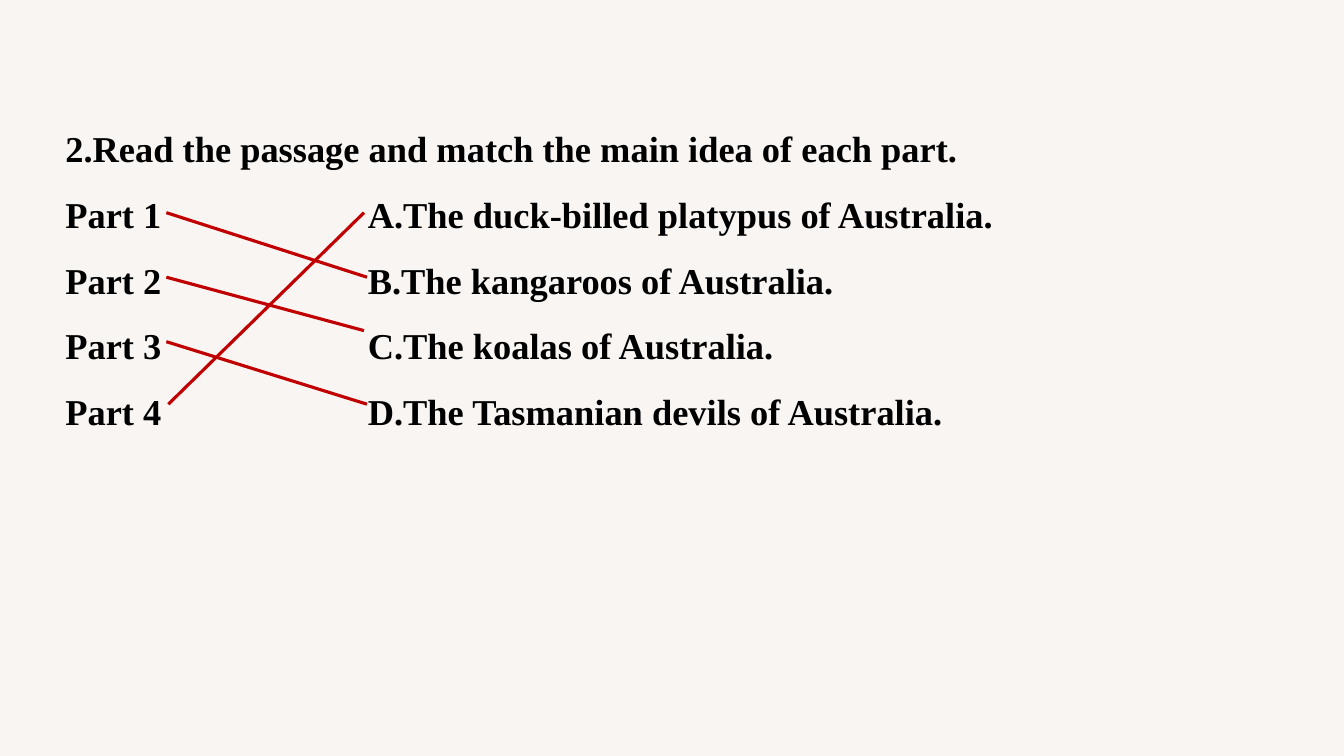
from dataclasses import dataclass

from lxml.etree import SubElement
from pptx import Presentation
from pptx.dml.color import RGBColor
from pptx.enum.shapes import MSO_CONNECTOR as Connector
from pptx.enum.text import MSO_AUTO_SIZE as AutoSize, PP_ALIGN as Align
from pptx.oxml.ns import qn
from pptx.util import Inches, Pt


@dataclass(frozen=True)
class Theme:
    background: RGBColor = RGBColor(0xF8, 0xF5, 0xF3)
    ink: RGBColor = RGBColor(0x00, 0x00, 0x00)
    answer: RGBColor = RGBColor(0xC0, 0x00, 0x00)
    font: str = "Times New Roman"
    size: float = 26
    leading: float = 46.8
    answer_width: float = 2.25


THEME = Theme()
QUESTION = "2.Read the passage and match the main idea of each part."
IDEAS = [
    "A.The duck-billed platypus of Australia.",
    "B.The kangaroos of Australia.",
    "C.The koalas of Australia.",
    "D.The Tasmanian devils of Australia.",
]
IDEA_TAB = 3.0
ANSWERS = [
    ((1.10, 1.12), (3.09, 1.76)),
    ((1.10, 1.76), (3.06, 2.29)),
    ((1.10, 2.40), (3.09, 3.02)),
    ((1.12, 3.02), (3.06, 1.12)),
]


def write(paragraph, text, tab=None, size=THEME.size, color=THEME.ink, bold=True):
    paragraph.alignment = Align.JUSTIFY
    paragraph.line_spacing = Pt(THEME.leading)
    if tab is not None:
        stops = SubElement(paragraph._p.get_or_add_pPr(), qn("a:tabLst"))
        SubElement(stops, qn("a:tab"), pos=str(Inches(tab)), algn="l")
    run = paragraph.add_run()
    run.text = text
    run.font.name = THEME.font
    run.font.size = Pt(size)
    run.font.bold = bold
    run.font.color.rgb = color


def add_exercise(slide, left, top, width, height):
    exercise = slide.shapes.add_textbox(
        Inches(left), Inches(top), Inches(width), Inches(height)
    ).text_frame
    exercise.word_wrap = True
    exercise.auto_size = AutoSize.NONE
    write(exercise.paragraphs[0], QUESTION)
    for number, idea in enumerate(IDEAS, start=1):
        write(exercise.add_paragraph(), f"Part {number}\t{idea}", tab=IDEA_TAB)


def add_answers(slide, left, top):
    for (part_x, part_y), (idea_x, idea_y) in ANSWERS:
        answer = slide.shapes.add_connector(
            Connector.STRAIGHT,
            Inches(left + part_x),
            Inches(top + part_y),
            Inches(left + idea_x),
            Inches(top + idea_y),
        )
        answer.line.color.rgb = THEME.answer
        answer.line.width = Pt(THEME.answer_width)
        SubElement(answer._element.spPr, qn("a:effectLst"))


def add_matching_slide(deck, left, top, width, height):
    slide = deck.slides.add_slide(deck.slide_layouts[6])
    slide.background.fill.solid()
    slide.background.fill.fore_color.rgb = THEME.background
    add_exercise(slide, left, top, width, height)
    add_answers(slide, left, top)


def main():
    deck = Presentation()
    deck.slide_width = Inches(13.33)
    deck.slide_height = Inches(7.5)
    add_matching_slide(deck, left=0.55, top=0.99, width=12.23, height=3.3)
    deck.save("out.pptx")


if __name__ == "__main__":
    main()
